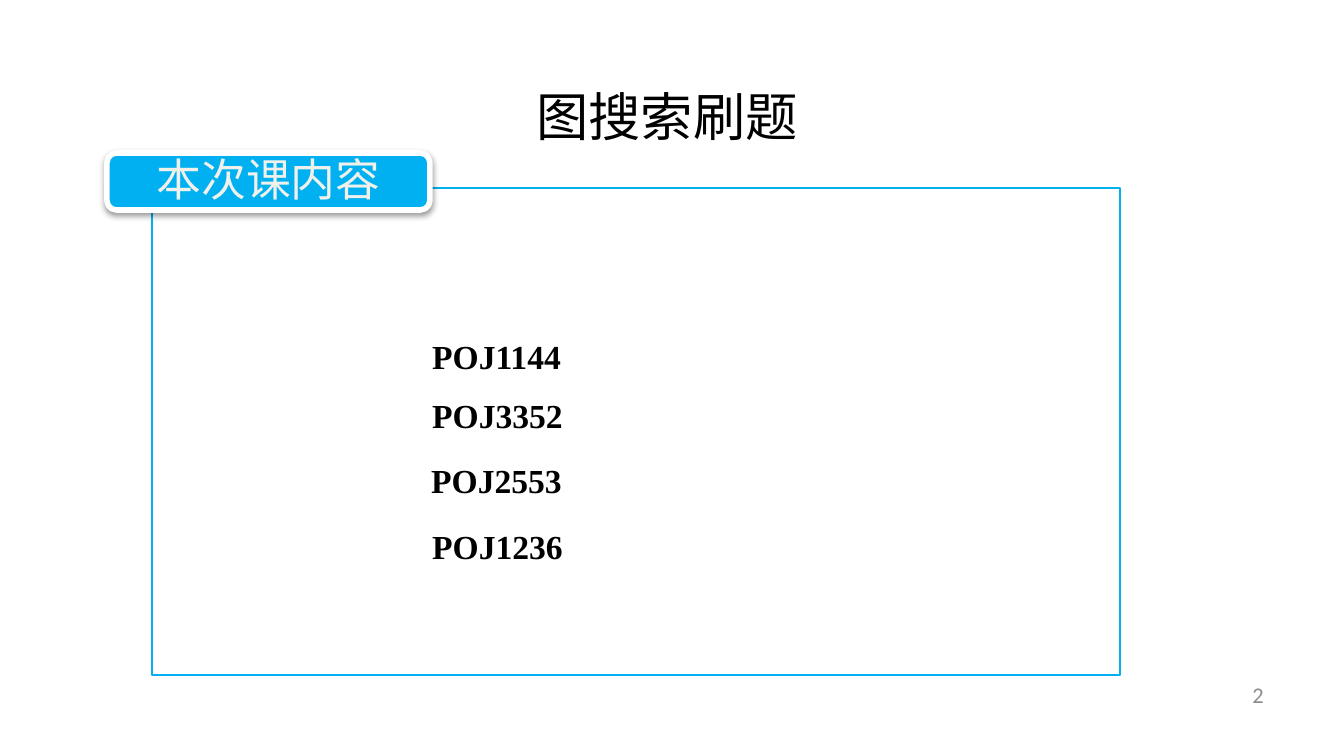
import pptx
import pptx.util
import pptx.dml.color
import pptx.enum.shapes
import pptx.enum.text
import pptx.oxml
import pptx.oxml.ns

# Content
TITLE = "图搜索刷题"
TAB_LABEL = "本次课内容"
PAGE_NUMBER = "2"
PROBLEMS = [  # text, left, top, width
    ("POJ1144", 419, 329, 661),
    ("POJ3352", 419, 388, 712),
    ("POJ2553", 418, 453, 712),
    ("POJ1236", 419, 519, 712),
]

# Look
COLORS = {"black": "000000", "white": "FFFFFF", "blue": "00B0F0",
          "label": "EFF1EA", "gray": "8C8C8C"}
CJK_FONT = "Noto Sans CJK SC"
ALIGN = pptx.enum.text.PP_ALIGN
ANCHOR = pptx.enum.text.MSO_ANCHOR
SHAPES = pptx.enum.shapes.MSO_SHAPE
PX = 914400 / 134.4
NAMESPACE = pptx.oxml.ns.nsdecls("a")


def px(*lengths):
    return [pptx.util.Emu(round(length * PX)) for length in lengths]


def rgb(name):
    return pptx.dml.color.RGBColor.from_string(COLORS[name])


def write(box, text, size, color="black", font="Calibri", bold=False,
          align=ALIGN.LEFT, anchor=ANCHOR.TOP, spacing=None, insets=None):
    frame = box.text_frame
    frame.word_wrap = True
    frame.vertical_anchor = anchor
    if insets:
        across, down = px(*insets)
        frame.margin_left = frame.margin_right = across
        frame.margin_top = frame.margin_bottom = down
    para = frame.paragraphs[0]
    para.alignment = align
    if spacing:
        para.line_spacing = spacing
    span = para.add_run()
    span.text = text
    span.font.size = pptx.util.Pt(size)
    span.font.bold = bold
    span.font.name = font
    span.font.color.rgb = rgb(color)
    span.font._element.append(pptx.oxml.parse_xml(
        f'<a:ea {NAMESPACE} typeface="{CJK_FONT}"/>'))


def add_text(page, place, text, **style):
    write(page.shapes.add_textbox(*px(*place)), text, **style)


def add_block(page, kind, place, fill, line, width):
    block = page.shapes.add_shape(kind, *px(*place))
    block.shadow.inherit = False
    block.fill.solid()
    block.fill.fore_color.rgb = rgb(fill)
    block.line.color.rgb = rgb(line)
    block.line.width = pptx.util.Pt(width)
    return block


def main():
    deck = pptx.Presentation()
    deck.slide_width, deck.slide_height = px(1344, 756)
    page = deck.slides.add_slide(deck.slide_layouts[6])

    # Page number and title
    add_text(page, (964, 675, 313, 40), PAGE_NUMBER, size=12, color="gray",
             align=ALIGN.RIGHT, anchor=ANCHOR.MIDDLE)
    add_text(page, (445, 56, 444, 90), TITLE, size=28, font=CJK_FONT,
             align=ALIGN.CENTER, spacing=1.35)

    # Slightly transparent panel
    panel = add_block(page, SHAPES.RECTANGLE, (152, 188, 968, 487),
                      "white", "blue", 0.75)
    fill_color = panel._element.spPr.find(
        pptx.oxml.ns.qn("a:solidFill"))[0]
    fill_color.append(pptx.oxml.parse_xml(
        f'<a:alpha {NAMESPACE} val="90000"/>'))

    # Tab with a soft shadow below
    tab = add_block(page, SHAPES.ROUNDED_RECTANGLE, (107, 153, 323, 57),
                    "blue", "white", 3)
    effects = tab._element.spPr.find(pptx.oxml.ns.qn("a:effectLst"))
    effects.append(pptx.oxml.parse_xml(
        f'<a:outerShdw {NAMESPACE} blurRad="39400" dist="20300" '
        f'dir="5400000" rotWithShape="0"><a:srgbClr val="{COLORS["black"]}">'
        '<a:alpha val="38000"/></a:srgbClr></a:outerShdw>'))
    write(tab, TAB_LABEL, size=24, color="label", align=ALIGN.CENTER,
          anchor=ANCHOR.MIDDLE, spacing=0.9, insets=(32, 8))

    # Problem list
    for text, left, top, width in PROBLEMS:
        add_text(page, (left, top, width, 54), text, size=18,
                 font="Times New Roman", bold=True)

    deck.save("out.pptx")


if __name__ == "__main__":
    main()
